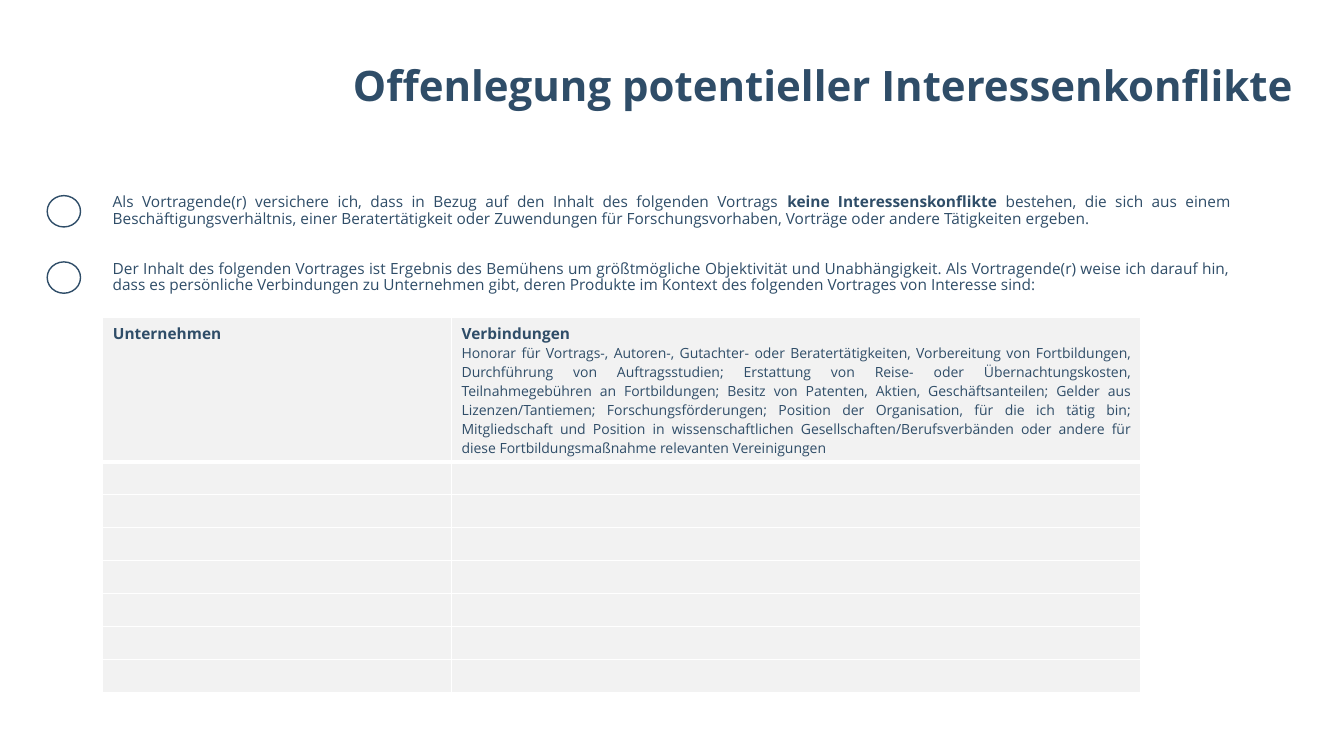
from lxml import etree
from pptx import Presentation
from pptx.dml.color import RGBColor
from pptx.enum.shapes import MSO_SHAPE
from pptx.enum.text import MSO_ANCHOR, MSO_AUTO_SIZE, PP_ALIGN
from pptx.oxml.ns import qn
from pptx.util import Cm, Pt

CIRCLE = MSO_SHAPE.FLOWCHART_CONNECTOR
TOP, MIDDLE = MSO_ANCHOR.TOP, MSO_ANCHOR.MIDDLE
NO_AUTOFIT = MSO_AUTO_SIZE.NONE
LEFT, RIGHT, JUSTIFY = PP_ALIGN.LEFT, PP_ALIGN.RIGHT, PP_ALIGN.JUSTIFY

FONT = "Open Sans"
COLORS = {"navy": "2F4D68", "cell": "F2F2F2", "border": "FFFFFF"}

TITLE = "Offenlegung potentieller Interessenkonflikte"
NO_CONFLICT = [
    ("Als Vortragende(r) versichere ich, dass in Bezug auf den Inhalt des folgenden Vortrags ", False),
    ("keine Interessenskonflikte", True),
    (" bestehen, die sich aus einem Beschäftigungsverhältnis, einer Beratertätigkeit oder "
     "Zuwendungen für Forschungsvorhaben, Vorträge oder andere Tätigkeiten ergeben.", False),
]
CONFLICT = [
    ("Der Inhalt des folgenden Vortrages ist Ergebnis des Bemühens um größtmögliche Objektivität "
     "und Unabhängigkeit. Als Vortragende(r) weise ich darauf hin, dass es persönliche Verbindungen "
     "zu Unternehmen gibt, deren Produkte im Kontext des folgenden Vortrages von Interesse sind:", False),
]
CONNECTIONS = (
    "Honorar für Vortrags-, Autoren-, Gutachter- oder Beratertätigkeiten, Vorbereitung von "
    "Fortbildungen, Durchführung von Auftragsstudien; Erstattung von Reise- oder "
    "Übernachtungskosten, Teilnahmegebühren an Fortbildungen; Besitz von Patenten, Aktien, "
    "Geschäftsanteilen; Gelder aus Lizenzen/Tantiemen; Forschungsförderungen; Position der "
    "Organisation, für die ich tätig bin; Mitgliedschaft und Position in wissenschaftlichen "
    "Gesellschaften/Berufsverbänden oder andere für diese Fortbildungsmaßnahme relevanten "
    "Vereinigungen"
)
COL_WIDTHS = [8.79, 17.37]
HEADER_HEIGHT, ROW_HEIGHT, EMPTY_ROWS = 3.63, 0.83, 7


def rgb(name):
    return RGBColor.from_string(COLORS[name])


def add_run(p, text, size, bold=False):
    r = p.add_run()
    r.text = text
    r.font.name = FONT
    r.font.size = Pt(size)
    r.font.bold = bold
    r.font.color.rgb = rgb("navy")


def add_title(slide, x, y, w, h):
    sp = slide.shapes.title
    sp.left, sp.top, sp.width, sp.height = Cm(x), Cm(y), Cm(w), Cm(h)
    tf = sp.text_frame
    tf.auto_size = NO_AUTOFIT
    tf.vertical_anchor = TOP
    tf.margin_top = Cm(0.05)
    p = tf.paragraphs[0]
    p.alignment = RIGHT
    p.line_spacing = 0.9
    add_run(p, TITLE, 30, True)


def add_statement(slide, x, y, w, h, runs, circle_dy, anchor):
    sp = slide.shapes.add_shape(CIRCLE, Cm(x), Cm(y + circle_dy), Cm(0.84), Cm(0.79))
    sp.shadow.inherit = False
    sp.fill.background()
    sp.line.color.rgb = rgb("navy")
    sp.line.width = Pt(1)

    indent = 1.4
    tf = slide.shapes.add_textbox(Cm(x + indent), Cm(y), Cm(w - indent), Cm(h)).text_frame
    tf.word_wrap = True
    tf.vertical_anchor = anchor
    p = tf.paragraphs[0]
    p.alignment = JUSTIFY
    p.line_spacing = 0.9
    for text, bold in runs:
        add_run(p, text, 11, bold)


def style_cell(cell, top, bottom):
    tc_pr = cell._tc.get_or_add_tcPr()
    for side, width in (("L", 1), ("R", 1), ("T", top), ("B", bottom)):
        ln = etree.SubElement(tc_pr, qn(f"a:ln{side}"), w=str(Pt(width)))
        fill = etree.SubElement(ln, qn("a:solidFill"))
        etree.SubElement(fill, qn("a:srgbClr"), val=COLORS["border"])
    cell.fill.solid()
    cell.fill.fore_color.rgb = rgb("cell")


def add_connections_table(slide, x, y):
    height = HEADER_HEIGHT + EMPTY_ROWS * ROW_HEIGHT
    table = slide.shapes.add_table(
        EMPTY_ROWS + 1, len(COL_WIDTHS), Cm(x), Cm(y), Cm(sum(COL_WIDTHS)), Cm(height)
    ).table
    for col, width in zip(table.columns, COL_WIDTHS):
        col.width = Cm(width)
    for i, row in enumerate(table.rows):
        row.height = Cm(ROW_HEIGHT if i else HEADER_HEIGHT)
        for cell in row.cells:
            style_cell(cell, 3 if i == 1 else 1, 1 if i else 3)
            if i:
                end = etree.SubElement(cell.text_frame.paragraphs[0]._p, qn("a:endParaRPr"), sz="1200")
                etree.SubElement(end, qn("a:latin"), typeface=FONT)

    for j, heading in enumerate(("Unternehmen", "Verbindungen")):
        p = table.cell(0, j).text_frame.paragraphs[0]
        p.alignment = LEFT
        add_run(p, heading, 11, True)
    p = table.cell(0, 1).text_frame.add_paragraph()
    p.alignment = JUSTIFY
    add_run(p, CONNECTIONS, 10)


def main():
    prs = Presentation()
    prs.slide_width, prs.slide_height = Cm(33.87), Cm(19.05)
    slide = prs.slides.add_slide(prs.slide_layouts[5])
    add_title(slide, 8.36, 1.6, 24.49, 2.11)
    add_statement(slide, 1.19, 4.8, 30.08, 1.02, NO_CONFLICT, 0.13, MIDDLE)
    add_statement(slide, 1.19, 6.45, 30.08, 1.52, CONFLICT, 0.15, TOP)
    add_connections_table(slide, 2.59, 8.01)
    prs.save("out.pptx")


if __name__ == "__main__":
    main()
